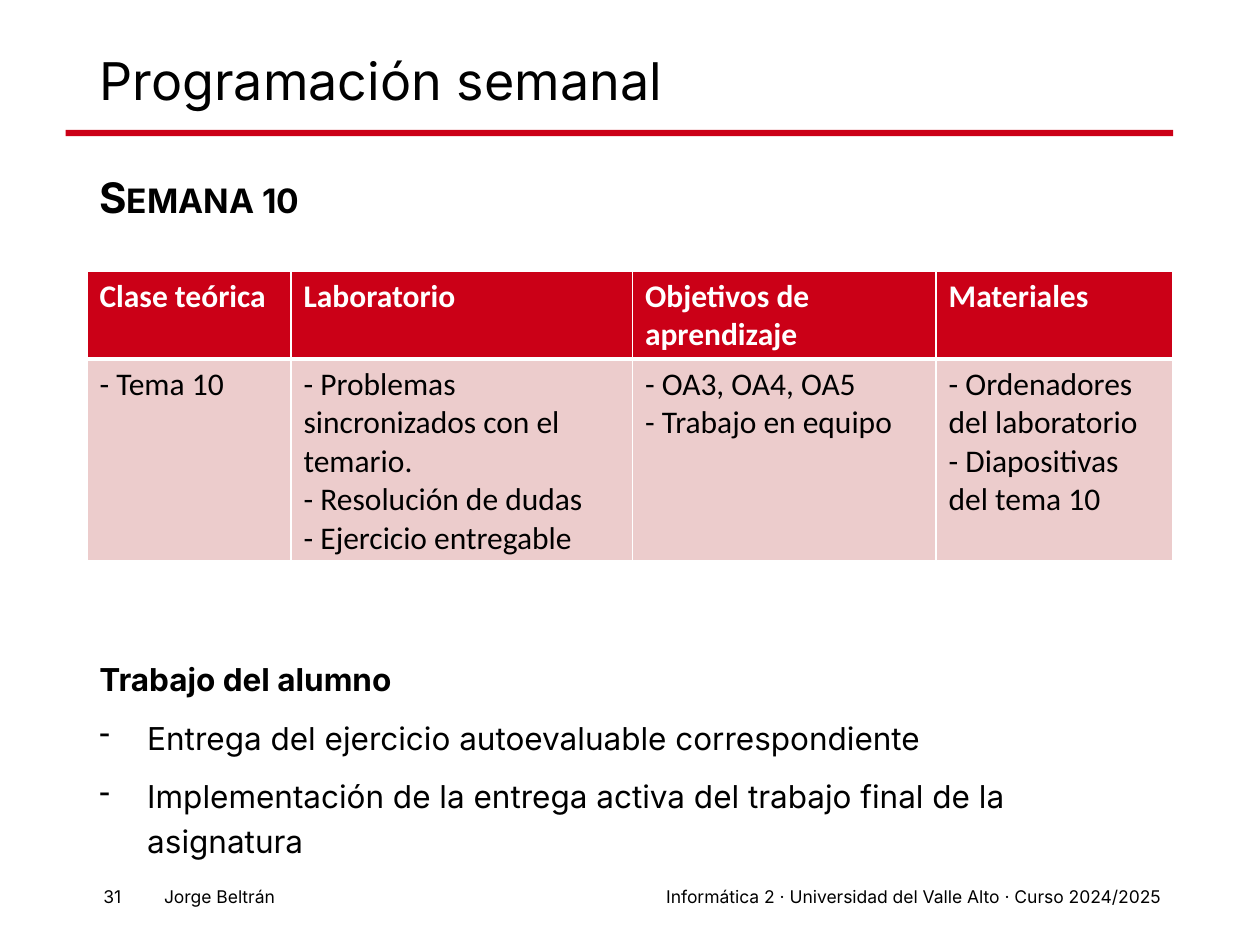
from lxml.etree import SubElement
from pptx import Presentation
from pptx.dml.color import RGBColor
from pptx.enum.shapes import MSO_SHAPE as Shape
from pptx.enum.text import MSO_ANCHOR as Anchor, PP_ALIGN as Align
from pptx.oxml.ns import qn
from pptx.util import Emu, Pt

PX = 9144
RED, PINK, WHITE, BLACK = "CB0017", "ECCCCC", "FFFFFF", "000000"


def px(length):
    return Emu(length * PX)


def color(value):
    return RGBColor.from_string(value)


class SlideBuilder:
    font = "Inter"
    table_font = "Calibri"

    def __init__(self, slide):
        self.slide = slide

    def style(self, paragraph, size, font, ink=BLACK, bold=False):
        for run in paragraph.runs:
            run.font.size = Pt(size)
            run.font.name = font
            run.font.bold = bold
            run.font.color.rgb = color(ink)

    def bar(self, box, fill):
        shape = self.slide.shapes.add_shape(Shape.RECTANGLE, *map(px, box))
        shape.shadow.inherit = False
        shape.fill.solid()
        shape.fill.fore_color.rgb = color(fill)
        shape.line.fill.background()

    def text(self, box, text, size, align=Align.LEFT, anchor=Anchor.TOP, spacing=1.0):
        frame = self.slide.shapes.add_textbox(*map(px, box)).text_frame
        frame.word_wrap = True
        frame.vertical_anchor = anchor
        frame.text = text
        for paragraph in frame.paragraphs:
            paragraph.alignment = align
            paragraph.line_spacing = spacing
            self.style(paragraph, size, self.font)
        return frame

    def body(self, box, heading, size, items=(), small_caps=False):
        frame = self.text(box, "\n".join([heading, *items]), size, spacing=1.2)
        for paragraph in frame.paragraphs:
            paragraph.space_before = Pt(7.5)
        first, *others = frame.paragraphs
        first.runs[0].font.bold = True
        if small_caps:
            first.runs[0].font._element.set("cap", "small")
        for paragraph in others:
            self.bullet(paragraph)

    def bullet(self, paragraph):
        properties = paragraph._p.get_or_add_pPr()
        properties.set("marL", str(px(38)))
        properties.set("indent", str(px(-38)))
        SubElement(properties, qn("a:buChar"), char="-")

    def border(self, cell, side, width):
        properties = cell._tc.get_or_add_tcPr()
        line = SubElement(properties, qn(f"a:ln{side}"), w=str(Pt(width)))
        fill = SubElement(line, qn("a:solidFill"))
        SubElement(fill, qn("a:srgbClr"), val=WHITE)

    def table(self, box, widths, heights, rows):
        frame = self.slide.shapes.add_table(len(rows), len(widths), *map(px, box))
        table = frame.table
        table.horz_banding = False
        for column, width in zip(table.columns, widths):
            column.width = px(width)
        for row, height in zip(table.rows, heights):
            row.height = px(height)
        for row_index, texts in enumerate(rows):
            for column_index, text in enumerate(texts):
                self.cell(table.cell(row_index, column_index), text, row_index == 0)

    def cell(self, cell, text, header):
        cell.text = text
        for paragraph in cell.text_frame.paragraphs:
            self.style(paragraph, 18, self.table_font, WHITE if header else BLACK, header)
        divider = "B" if header else "T"
        for side in "LRTB":
            self.border(cell, side, 3 if side == divider else 1)
        cell.fill.solid()
        cell.fill.fore_color.rgb = color(RED if header else PINK)


def main():
    presentation = Presentation()
    presentation.slide_width, presentation.slide_height = px(1000), px(750)
    builder = SlideBuilder(presentation.slides.add_slide(presentation.slide_layouts[6]))

    builder.bar((52, 103, 879, 5), RED)
    footers = [
        (253, 678, "Informática 2 · Universidad del Valle Alto · Curso 2024/2025"),
        (58, 48, "31"),
        (21, 207, "Jorge Beltrán"),
    ]
    for left, width, text in footers:
        builder.text((left, 698, width, 27), text, 10, Align.RIGHT)

    builder.text((69, 40, 862, 52), "Programación semanal", 29.7,
                 anchor=Anchor.MIDDLE, spacing=0.9)
    builder.table((69, 215, 862, 230), (162, 271, 241, 188), (41, 41), [
        ["Clase teórica", "Laboratorio", "Objetivos de aprendizaje", "Materiales"],
        [
            "- Tema 10",
            "- Problemas sincronizados con el temario.\n"
            "- Resolución de dudas\n- Ejercicio entregable",
            "- OA3, OA4, OA5\n- Trabajo en equipo",
            "- Ordenadores del laboratorio\n- Diapositivas del tema 10",
        ],
    ])
    builder.body((69, 123, 862, 68), "Semana 10", 24, small_caps=True)
    builder.body((69, 513, 862, 170), "Trabajo del alumno", 18, [
        "Entrega del ejercicio autoevaluable correspondiente",
        "Implementación de la entrega activa del trabajo final de la asignatura",
    ])
    presentation.save("out.pptx")


if __name__ == "__main__":
    main()
